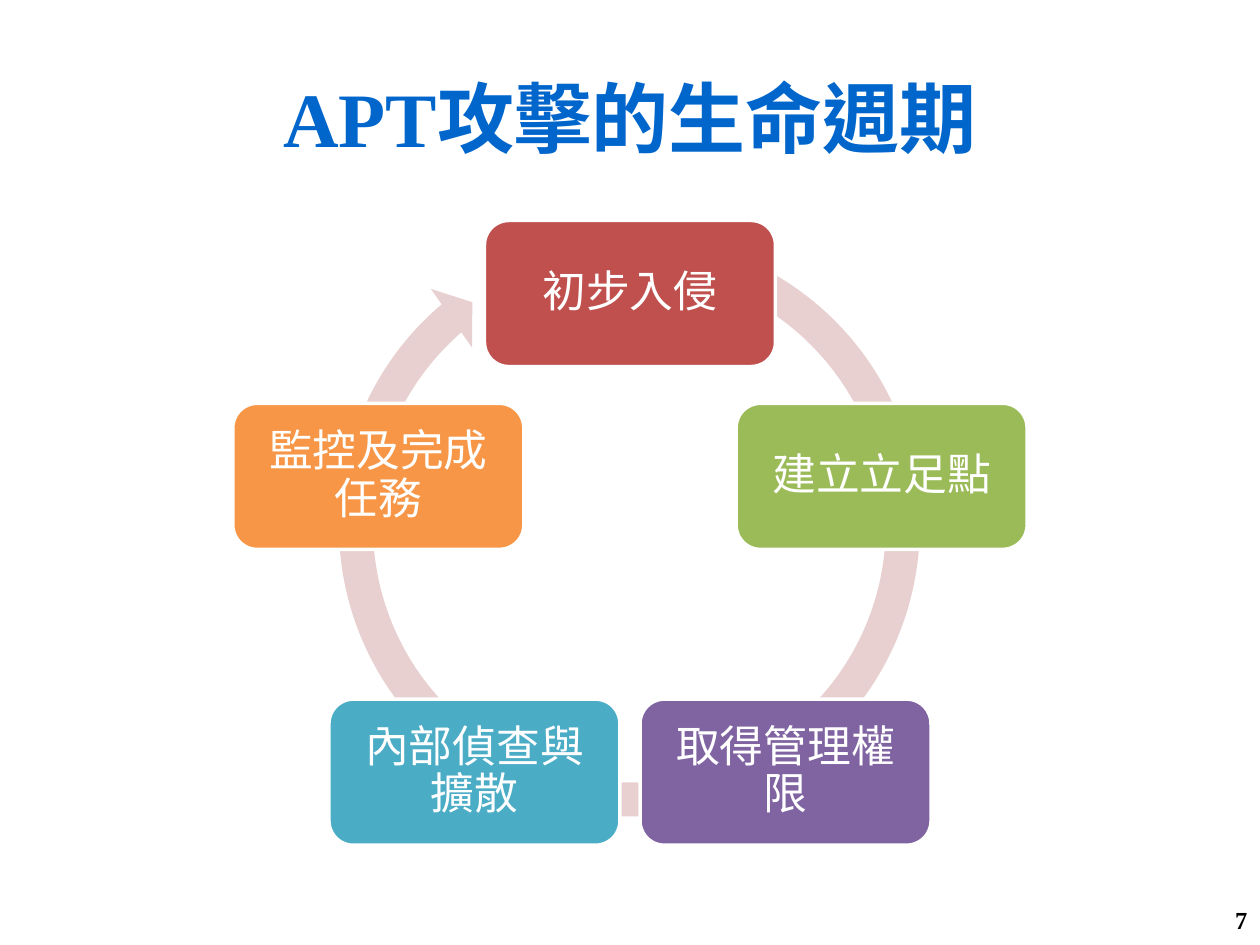
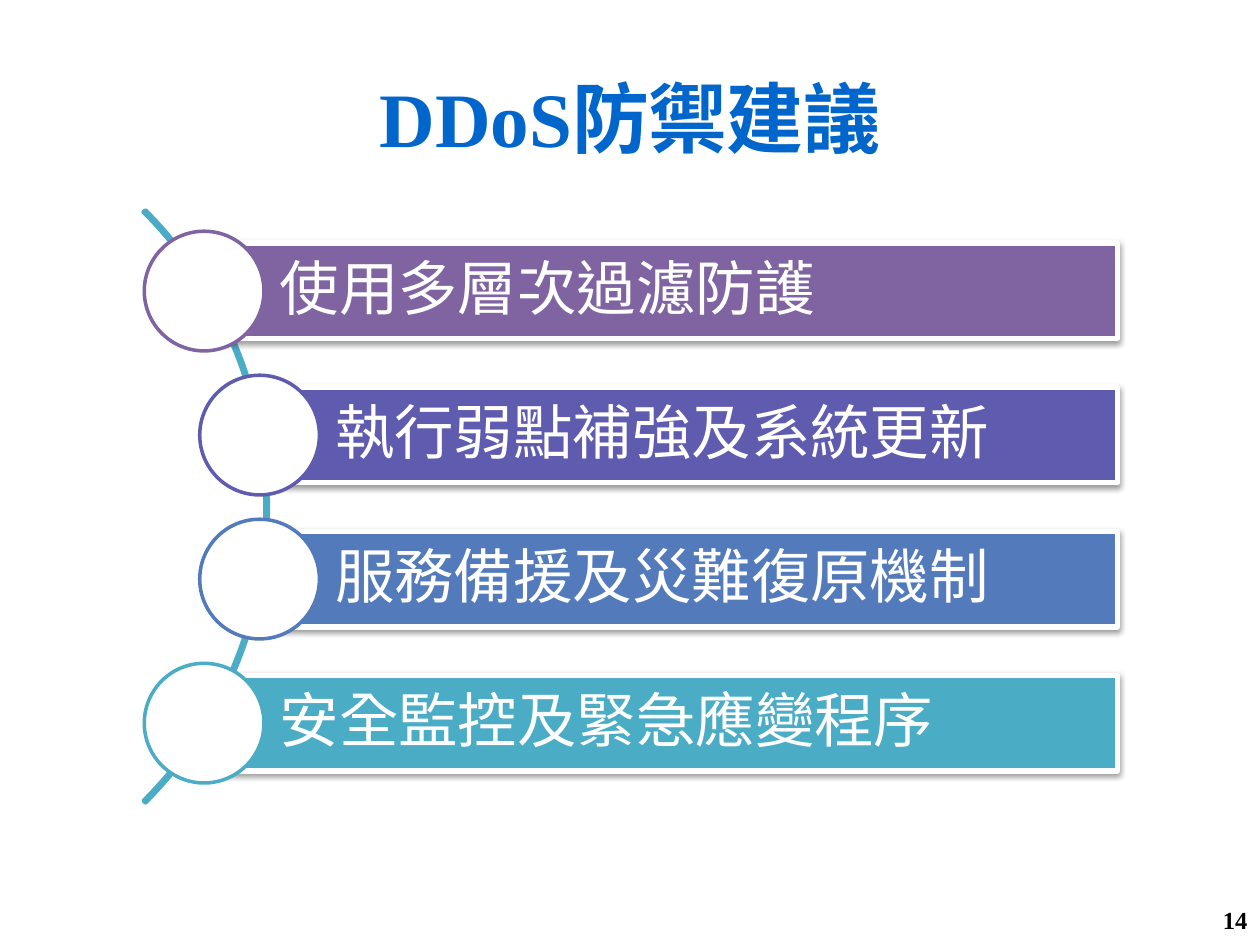
from math import cos, radians, sin

from lxml import etree
from pptx import Presentation
from pptx.dml.color import RGBColor
from pptx.enum.lang import MSO_LANGUAGE_ID as Lang
from pptx.enum.shapes import MSO_SHAPE as Shape
from pptx.enum.text import MSO_ANCHOR as Anchor
from pptx.enum.text import MSO_AUTO_SIZE as Auto
from pptx.enum.text import PP_ALIGN as Align
from pptx.oxml import parse_xml
from pptx.oxml.ns import nsdecls
from pptx.util import Inches, Pt

# Grid: 100 columns by 75 rows of square cells
COLS, ROWS = 100, 75
CELL = Inches(0.1)

# Shared look
FONT = "Times New Roman"
WHITE = RGBColor(0xFF, 0xFF, 0xFF)
BLACK = RGBColor(0x00, 0x00, 0x00)
BLUE = RGBColor(0x00, 0x66, 0xCC)
RED = RGBColor(0xC0, 0x50, 0x4D)
GREEN = RGBColor(0x9B, 0xBB, 0x59)
PURPLE = RGBColor(0x80, 0x64, 0xA2)
INDIGO = RGBColor(0x5F, 0x5B, 0xAE)
STEEL = RGBColor(0x53, 0x7A, 0xBA)
TEAL = RGBColor(0x4B, 0xAC, 0xC6)
ORANGE = RGBColor(0xF7, 0x96, 0x46)
PINK = RGBColor(0xE8, 0xD0, 0xD0)

SHADOW = (
    f'<a:effectLst {nsdecls("a")}>'
    '<a:outerShdw blurRad="40000" dist="20000" dir="5400000" rotWithShape="0">'
    '<a:srgbClr val="000000"><a:alpha val="38000"/></a:srgbClr>'
    '</a:outerShdw></a:effectLst>'
)


def write(shape, text, size=25, color=WHITE, bold=False, align=Align.CENTER,
          space=1.0, inset=(1, 0.5, 1, 0.5)):
    """Fill a shape with one styled paragraph; insets are in grid cells."""
    frame = shape.text_frame
    frame.word_wrap = True
    frame.auto_size = Auto.NONE
    frame.vertical_anchor = Anchor.MIDDLE
    sides = [round(n * CELL) for n in inset]
    frame.margin_left, frame.margin_top = sides[:2]
    frame.margin_right, frame.margin_bottom = sides[2:]
    para = frame.paragraphs[0]
    para.alignment = align
    para.line_spacing = space
    run = para.add_run()
    run.text = text
    font = run.font
    font.name, font.size, font.bold = FONT, Pt(size), bold
    font.color.rgb = color
    font.language_id = Lang.TRADITIONAL_CHINESE


def draw(slide, kind, x, y, w, h, fill=None, line=None, width=2):
    """Add a preset shape; x, y, w and h are in grid cells."""
    box = [round(n * CELL) for n in (x, y, w, h)]
    shape = slide.shapes.add_shape(kind, *box)
    shape.shadow.inherit = False
    if fill is None:
        shape.fill.background()
    else:
        shape.fill.solid()
        shape.fill.fore_color.rgb = fill
    if line is None:
        shape.line.fill.background()
    else:
        shape.line.color.rgb = line
        shape.line.width = Pt(width)
    return shape


deck = Presentation()
deck.slide_width, deck.slide_height = COLS * CELL, ROWS * CELL

# Title and page number on both slides
pages = []
for name, num in (("APT攻擊的生命週期", "7"), ("DDoS防禦建議", "14")):
    page = deck.slides.add_slide(deck.slide_layouts[5])
    title = page.shapes.title
    title.left, title.top = 5 * CELL, 3 * CELL
    title.width, title.height = 90 * CELL, round(12.5 * CELL)
    write(title, name, size=44, color=BLUE, bold=True)
    foot = page.shapes.add_textbox(round(76.7 * CELL), 71 * CELL,
                                   round(23.3 * CELL), 4 * CELL)
    write(foot, num, size=14, color=BLACK, bold=True, align=Align.RIGHT)
    pages.append(page)
cycle, guard = pages

# Attack cycle: ring arrow behind the stages
ring = draw(cycle, Shape.CIRCULAR_ARROW, 25.4, 17.2, 49.1, 49.1, fill=PINK)
for i, value in enumerate((0.055, 3.307, 137.657, 173.922, 0.058)):
    ring.adjustments[i] = value

# Stages at equal angles, clockwise from the top
STAGES = (("初步入侵", RED), ("建立立足點", GREEN), ("取得管理權限", PURPLE),
          ("內部偵查與擴散", TEAL), ("監控及完成任務", ORANGE))
MID_X, MID_Y, RADIUS = 50, 44.3, 21
WIDE, HIGH = 23.1, 11.6
for i, (text, color) in enumerate(STAGES):
    angle = radians(i * 360 / len(STAGES))
    x = MID_X + RADIUS * sin(angle) - WIDE / 2
    y = MID_Y - RADIUS * cos(angle) - HIGH / 2
    stage = draw(cycle, Shape.ROUNDED_RECTANGLE, x, y, WIDE, HIGH,
                 fill=color, line=WHITE)
    write(stage, text, space=0.9, inset=(1, 1, 1, 1))

# Defence advice: arc behind the bars
arc = draw(guard, Shape.BLOCK_ARC, -45.3, 6.9, 66.6, 66.6, line=TEAL)
for i, value in enumerate((189, 27, 0.004)):
    arc.adjustments[i] = value

# Bars, each starting at the centre of its disc
ADVICE = (("使用多層次過濾防護", PURPLE, 16.2), ("執行弱點補強及系統更新", INDIGO, 20.6),
          ("服務備援及災難復原機制", STEEL, 20.6), ("安全監控及緊急應變程序", TEAL, 16.2))
RIGHT, TOP, STEP = 88.7, 19.3, 11.43
BAR, DISC = 7.6, 9.5
for i, (text, color, x) in enumerate(ADVICE):
    y = TOP + i * STEP
    bar = draw(guard, Shape.RECTANGLE, x, y, RIGHT - x, BAR,
               fill=color, line=WHITE, width=3)
    props = bar.fill._xPr
    props.remove(props.find("{*}effectLst"))
    props.append(parse_xml(etree.tostring(etree.fromstring(SHADOW))))
    write(bar, text, size=34, align=Align.LEFT, space=0.9,
          inset=(6, 0.9, 0.9, 0.9))
    draw(guard, Shape.OVAL, x - DISC / 2, y + (BAR - DISC) / 2, DISC, DISC,
         fill=WHITE, line=color)

deck.save("out.pptx")
